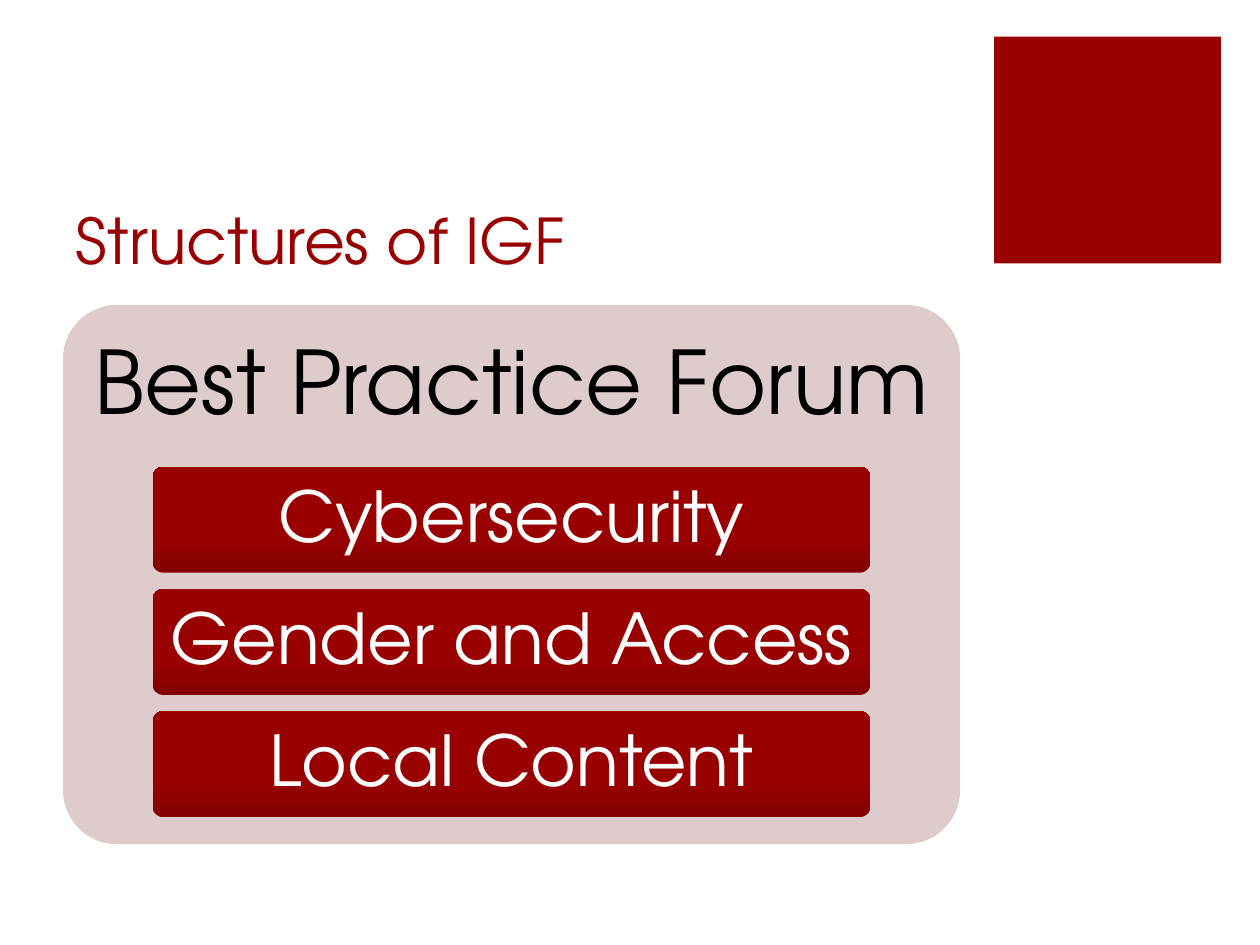
from pptx import Presentation
from pptx.dml.color import RGBColor
from pptx.enum.shapes import MSO_SHAPE as Shape
from pptx.enum.text import MSO_ANCHOR as Anchor, MSO_AUTO_SIZE as Fit, PP_ALIGN as Align
from pptx.util import Inches, Pt

FONT = "TeX Gyre Adventor"
RED, DARK, PINK = "990000", "830000", "DECCCC"
BLACK, WHITE = "000000", "FFFFFF"


def color(code):
    return RGBColor.from_string(code)


def place(box):
    return [Inches(n) for n in box]


def write(frame, text, size, code, align, anchor, pad=(0.1, 0.05), wrap=True):
    frame.auto_size = Fit.NONE
    frame.word_wrap = wrap
    frame.vertical_anchor = anchor
    frame.margin_left = frame.margin_right = Inches(pad[0])
    frame.margin_top = frame.margin_bottom = Inches(pad[1])
    para = frame.paragraphs[0]
    para.alignment = align
    run = para.add_run()
    run.text = text
    run.font.size = Pt(size)
    run.font.name = FONT
    run.font.color.rgb = color(code)
    return para


def block(slide, kind, box, code):
    shape = slide.shapes.add_shape(kind, *place(box))
    shape.shadow.inherit = False
    shape.line.fill.background()
    shape.fill.solid()
    shape.fill.fore_color.rgb = color(code)
    if kind == Shape.ROUNDED_RECTANGLE:
        shape.adjustments[0] = 0.1
    return shape


def title(slide, box, text):
    head = slide.shapes.title
    head.left, head.top, head.width, head.height = place(box)
    write(head.text_frame, text, 36, RED, Align.LEFT, Anchor.BOTTOM)


def bar(slide, box, text):
    shape = block(slide, Shape.ROUNDED_RECTANGLE, box, RED)
    # Shade rises from the dark lower edge
    fill = shape.fill
    fill.gradient()
    fill.gradient_angle = 90
    for stop, (spot, code) in zip(fill.gradient_stops, ((0, DARK), (0.35, RED))):
        stop.position = spot
        stop.color.rgb = color(code)
    para = write(shape.text_frame, text, 40, WHITE, Align.CENTER,
                 Anchor.MIDDLE, (0.11, 0.08), False)
    para.line_spacing = 0.9


def panel(slide, box, text, items):
    left, top, width, height = box
    block(slide, Shape.ROUNDED_RECTANGLE, box, PINK)
    # Heading fills the top 30 %
    head = slide.shapes.add_textbox(*place((left, top, width, height * 0.3)))
    para = write(head.text_frame, text, 50, BLACK, Align.CENTER,
                 Anchor.MIDDLE, (0.21, 0.21))
    para.line_spacing = 0.9
    # Bars share the next 65 %, with gaps of 3 %
    gap = height * 0.03
    tall = (height * 0.65 - gap * (len(items) - 1)) / len(items)
    for row, item in enumerate(items):
        y = top + height * 0.3 + row * (tall + gap)
        bar(slide, (left + width * 0.1, y, width * 0.8, tall), item)


def main():
    deck = Presentation()
    deck.slide_width, deck.slide_height = Inches(10), Inches(7.5)
    slide = deck.slides.add_slide(deck.slide_layouts[5])
    # Corner square
    block(slide, Shape.RECTANGLE, (7.89, 0.29, 1.8, 1.8), RED)
    title(slide, (0.5, 1, 7.12, 1.25), "Structures of IGF")
    panel(slide, (0.5, 2.42, 7.12, 4.28), "Best Practice Forum",
          ("Cybersecurity", "Gender and Access", "Local Content"))
    deck.save("out.pptx")


if __name__ == "__main__":
    main()
